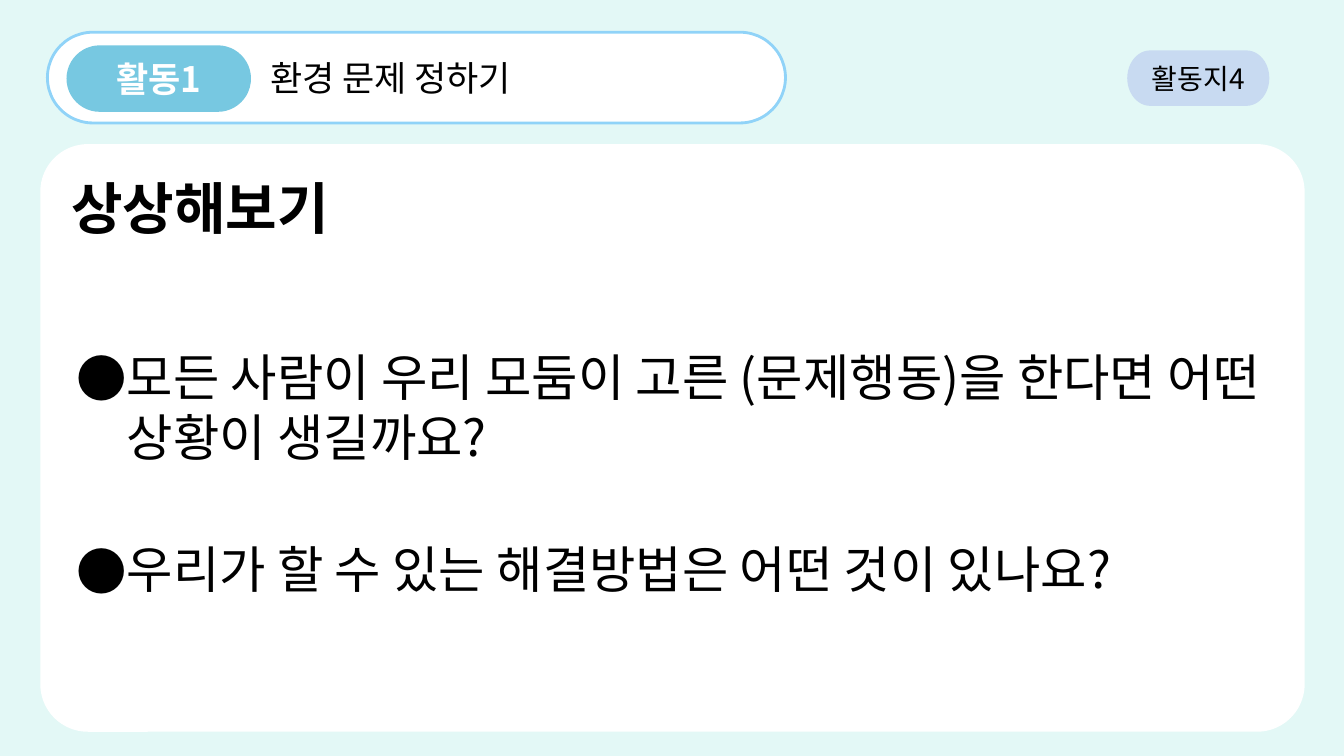
import pptx
import pptx.dml.color
import pptx.enum.shapes
import pptx.enum.text
import pptx.oxml
import pptx.oxml.ns
import pptx.util
from pptx.util import Inches

FONT = "Noto Sans CJK KR"
SHAPE = pptx.enum.shapes.MSO_SHAPE
ALIGN = pptx.enum.text.PP_ALIGN
ANCHOR = pptx.enum.text.MSO_ANCHOR
LABEL = {"size": pptx.util.Pt(25), "bold": False}
TAB = {"size": pptx.util.Pt(25), "bold": True}
SHEET = {"size": pptx.util.Pt(20), "bold": False}
HEADING = {"size": pptx.util.Pt(40), "bold": True}
QUESTION = {"size": pptx.util.Pt(36), "bold": False}


def rgb(value):
    return pptx.dml.color.RGBColor.from_string(value)


def write(sp, text, style, color="000000", align=ALIGN.LEFT,
          anchor=ANCHOR.TOP, inset=0.05):
    """Put one formatted paragraph in a shape and return it."""
    tf = sp.text_frame
    frame = {"word_wrap": True, "auto_size": pptx.enum.text.MSO_AUTO_SIZE.NONE,
             "vertical_anchor": anchor,
             "margin_left": Inches(0.1), "margin_right": Inches(0.1),
             "margin_top": Inches(inset), "margin_bottom": Inches(inset)}
    for name, value in frame.items():
        setattr(tf, name, value)
    p = tf.paragraphs[0]
    p.alignment = align
    r = p.add_run()
    r.text = text
    for name, value in {"name": FONT, **style}.items():
        setattr(r.font, name, value)
    r.font.color.rgb = rgb(color)
    # Hangul takes the East Asian typeface
    ea = pptx.oxml.parse_xml(
        f'<a:ea {pptx.oxml.ns.nsdecls("a")} typeface="{FONT}"/>')
    r.font._element.append(ea)
    return p


def add_panel(slide, kind, box, fill, line=None, radius=None):
    sp = slide.shapes.add_shape(kind, *map(Inches, box))
    sp.shadow.inherit = False
    sp.fill.solid()
    sp.fill.fore_color.rgb = rgb(fill)
    if radius is not None:
        sp.adjustments[0] = radius
    if line:
        sp.line.color.rgb = rgb(line)
        sp.line.width = pptx.util.Pt(2)
    else:
        sp.line.fill.background()
    return sp


def add_bullet(p):
    pPr = p._p.get_or_add_pPr()
    pPr.set("marL", str(Inches(0.5)))
    pPr.set("indent", str(-Inches(0.5)))
    ns = pptx.oxml.ns.nsdecls("a")
    for xml in (f'<a:buClr {ns}><a:srgbClr val="000000"/></a:buClr>',
                f'<a:buFont {ns} typeface="{FONT}"/>',
                f'<a:buChar {ns} char="●"/>'):
        pPr.append(pptx.oxml.parse_xml(xml))


def add_activity_bar(slide, box, tab, label):
    x, y, w, h = box
    add_panel(slide, SHAPE.ROUNDED_RECTANGLE, box, "FFFFFF", "90D3F8", 0.5)
    sp = add_panel(slide, SHAPE.ROUNDED_RECTANGLE,
                   (x + 0.19, y + 0.13, 1.83, 0.66), "77C8E1", radius=0.5)
    write(sp, tab, TAB, "FFFFFF", ALIGN.CENTER, ANCHOR.MIDDLE)
    sp = slide.shapes.add_textbox(
        *map(Inches, (x + 2.11, y + 0.19, 3.42, 0.51)))
    write(sp, label, LABEL)


def add_sheet_tag(slide, box, text):
    sp = add_panel(slide, SHAPE.FLOWCHART_TERMINATOR, box, "C8DAF1")
    write(sp, text, SHEET, align=ALIGN.CENTER, anchor=ANCHOR.MIDDLE)


def add_question_card(slide, box, heading, questions):
    x, y, w, h = box
    add_panel(slide, SHAPE.ROUNDED_RECTANGLE, box, "FFFFFF", radius=0.081)
    # Questions
    for i, question in enumerate(questions):
        sp = slide.shapes.add_textbox(
            *map(Inches, (x + 0.26, y + 1.9 + 1.91 * i, w - 0.47, 1.35)))
        add_bullet(write(sp, question, QUESTION, inset=0.1))
    # Title, raised above the card
    title = slide.shapes.title
    place = {"left": x + 0.21, "top": y + 0.17, "width": w - 0.42, "height": 0.9}
    for name, value in place.items():
        setattr(title, name, Inches(value))
    write(title, heading, HEADING, anchor=ANCHOR.MIDDLE)
    slide.shapes._spTree.append(title._element)


def main():
    prs = pptx.Presentation()
    prs.slide_width, prs.slide_height = Inches(13.33), Inches(7.5)
    slide = prs.slides.add_slide(prs.slide_layouts.get_by_name("Title Only"))
    slide.background.fill.solid()
    slide.background.fill.fore_color.rgb = rgb("E3F8F6")

    add_sheet_tag(slide, (11.18, 0.5, 1.41, 0.55), "활동지4")
    add_activity_bar(slide, (0.47, 0.32, 7.32, 0.9), "활동1", "환경 문제 정하기")
    add_question_card(slide, (0.4, 1.43, 12.54, 5.83), "상상해보기", [
        "모든 사람이 우리 모둠이 고른 (문제행동)을 한다면 어떤 상황이 생길까요?",
        "우리가 할 수 있는 해결방법은 어떤 것이 있나요?",
    ])
    prs.save("out.pptx")


if __name__ == "__main__":
    main()
